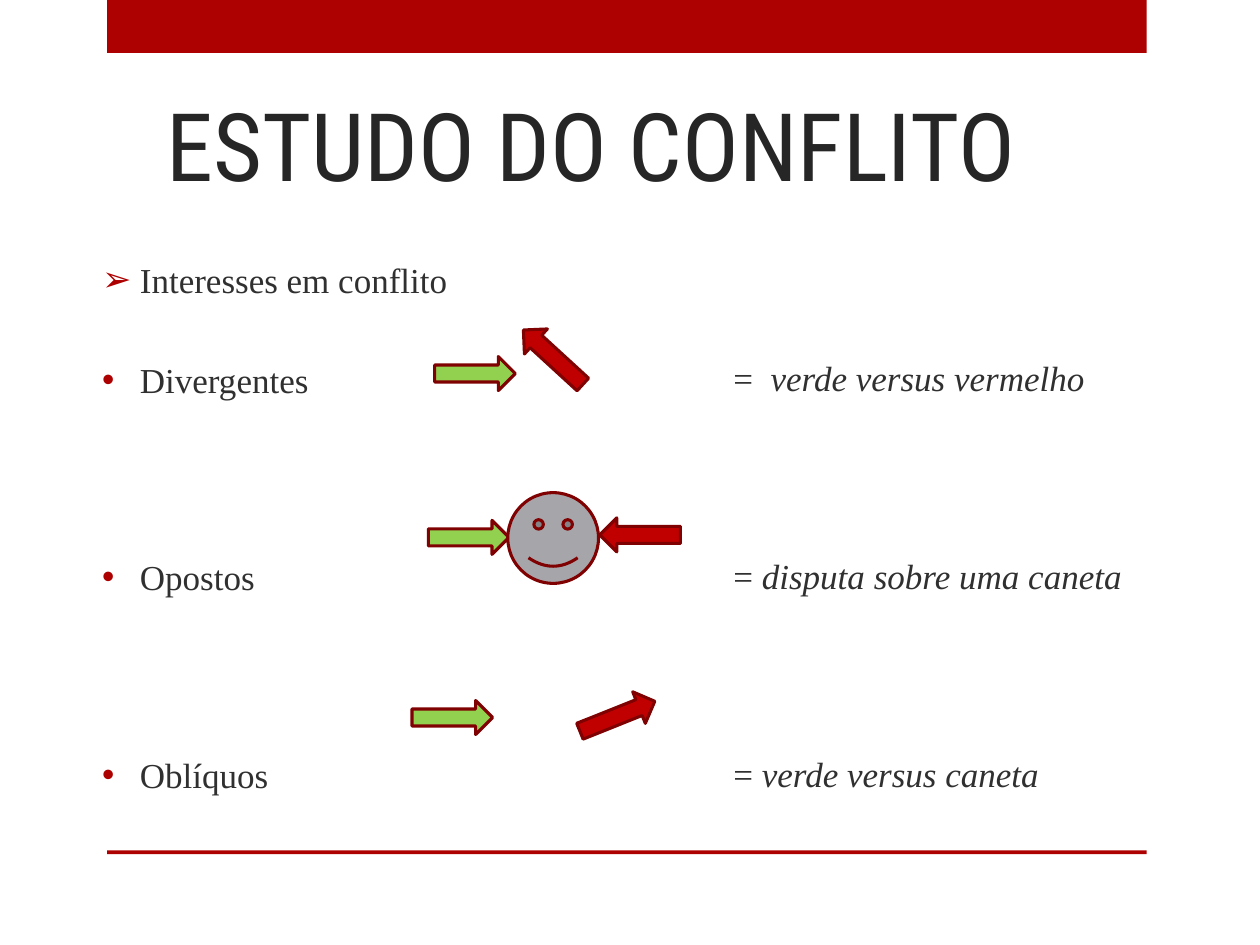
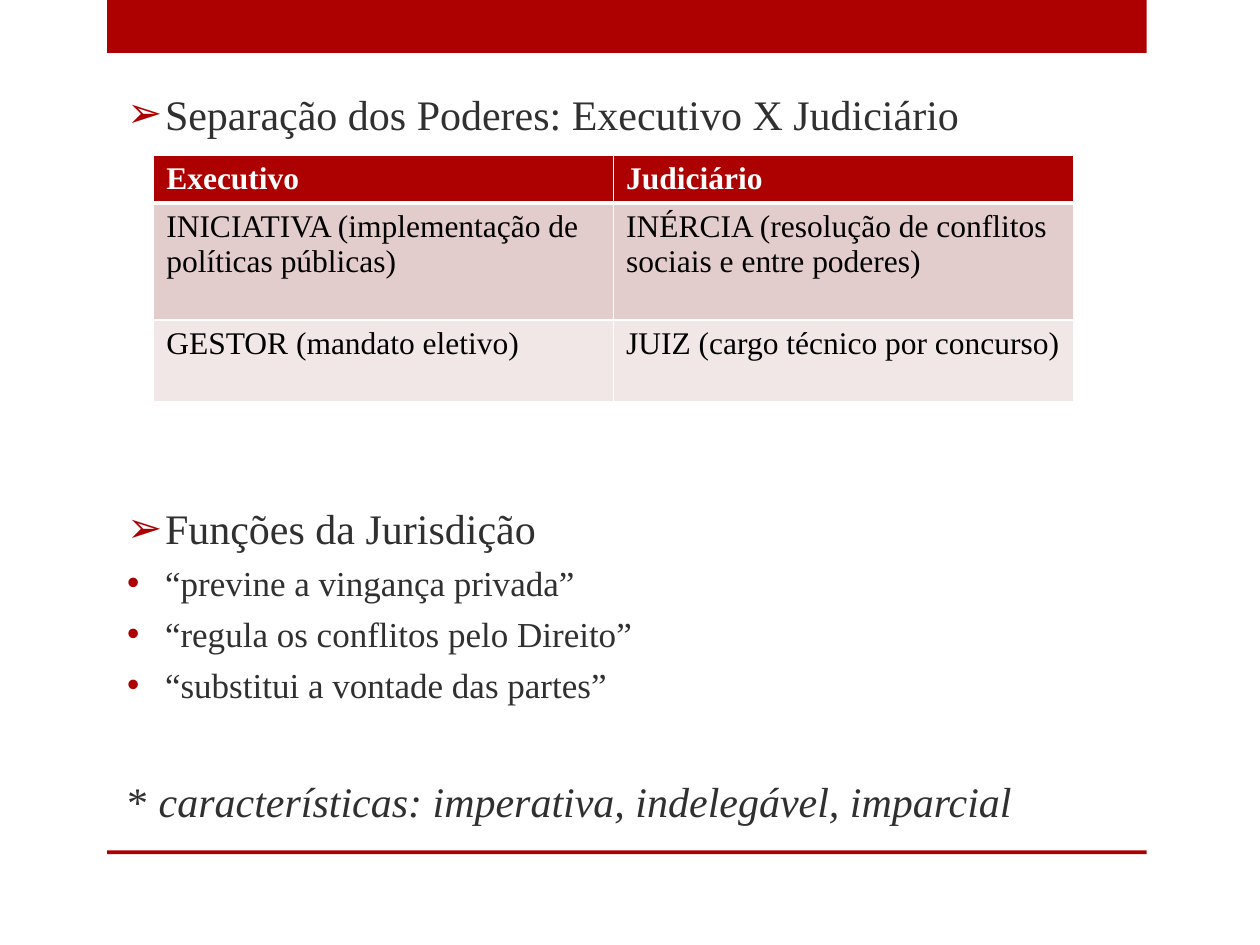
import pptx
import pptx.dml.color
import pptx.enum.shapes
import pptx.enum.text
import pptx.oxml
import pptx.oxml.ns
import pptx.util
from dataclasses import dataclass

SHAPES = pptx.enum.shapes.MSO_SHAPE
ALIGN = pptx.enum.text.PP_ALIGN
ANCHOR = pptx.enum.text.MSO_ANCHOR
NO_FIT = pptx.enum.text.MSO_AUTO_SIZE.NONE

# Slide grid: every length below is in columns (x) or rows (y)
WIDTH, HEIGHT = pptx.util.Inches(10), pptx.util.Inches(7.5)
COLUMNS, ROWS = 100, 75
HANGING = 3  # columns between a bullet and its text
ARROW_SIZE = (6.4, 2.7)


@dataclass(frozen=True)
class Theme:
    red: str = "AD0101"
    title: str = "262626"
    text: str = "303030"
    white: str = "FFFFFF"
    black: str = "000000"
    outline: str = "800101"
    green_arrow: str = "92D050"
    red_arrow: str = "C00000"
    face: str = "A5A5AA"
    table_rows: tuple = ("AD0101", "E3CCCC", "F1E7E7")
    title_font: str = "Roboto Condensed"
    body_font: str = "Times New Roman"
    title_size: int = 54
    heading_size: int = 24
    item_size: int = 20
    table_size: int = 18
    outline_width: float = 1.75


def across(columns):
    return int(WIDTH * columns / COLUMNS)


def down(rows):
    return int(HEIGHT * rows / ROWS)


def box(left, top, width, height):
    return across(left), down(top), across(width), down(height)


def rgb(colour):
    return pptx.dml.color.RGBColor.from_string(colour)


def apply(target, formats):
    for name, value in formats.items():
        setattr(target, name, value)


def element(markup):
    namespaces = pptx.oxml.ns.nsdecls("a")
    return pptx.oxml.parse_xml(markup.replace(" ", f" {namespaces} ", 1))


class Deck:
    def __init__(self, theme):
        self.theme = theme
        self.presentation = pptx.Presentation()
        apply(self.presentation, {"slide_width": WIDTH, "slide_height": HEIGHT})
        self.slide = None

    def new_slide(self, layout):
        layouts = self.presentation.slide_layouts
        self.slide = self.presentation.slides.add_slide(layouts.get_by_name(layout))

    def shape(self, kind, place, fill, outline=None, rotation=0):
        shape = self.slide.shapes.add_shape(kind, *box(*place))
        shape.shadow.inherit = False
        shape.rotation = rotation
        shape.fill.solid()
        shape.fill.fore_color.rgb = rgb(fill)
        if outline:
            shape.line.color.rgb = rgb(outline)
            shape.line.width = pptx.util.Pt(self.theme.outline_width)
        else:
            shape.line.fill.background()
        return shape

    def master_band(self, place, number):
        """Draw a band and move it behind everything, into the master."""
        band = self.shape(SHAPES.RECTANGLE, place, self.theme.red)
        band.element.nvSpPr.cNvPr.set("id", str(number))
        self.presentation.slide_master.element.cSld.spTree.insert(2, band.element)

    def run(self, paragraph, text, font, size, colour, **formats):
        run = paragraph.add_run()
        run.text = text
        apply(run.font, {"name": font, "size": pptx.util.Pt(size), **formats})
        run.font.color.rgb = rgb(colour)

    def placeholder(self, shape, place, anchor):
        names = ("left", "top", "width", "height")
        apply(shape, dict(zip(names, box(*place))))
        frame = shape.text_frame
        apply(frame, {"word_wrap": True, "auto_size": NO_FIT, "vertical_anchor": anchor})
        return frame

    def title(self, text, place):
        frame = self.placeholder(self.slide.shapes.title, place, ANCHOR.BOTTOM)
        paragraph = frame.paragraphs[0]
        paragraph.alignment = ALIGN.CENTER
        self.run(paragraph, text, self.theme.title_font, self.theme.title_size,
                 self.theme.title)

    def remove_title(self):
        title = self.slide.shapes.title.element
        title.getparent().remove(title)

    def bullet(self, paragraph, symbol):
        properties = paragraph._p.get_or_add_pPr()
        indent = across(HANGING) if symbol else 0
        apply(properties, {"marL": indent, "indent": -indent})
        properties.set("marL", str(indent))
        properties.set("indent", str(-indent))
        if symbol:
            properties.append(element(
                f'<a:buClr ><a:srgbClr val="{self.theme.red}"/></a:buClr>'))
            properties.append(element(f'<a:buChar char="{symbol}"/>'))
        else:
            properties.append(element("<a:buNone />"))

    def body(self, index, place, items):
        """Items are (bullet, plain text, italic text, size, points before)."""
        frame = self.placeholder(self.slide.placeholders[index], place, ANCHOR.TOP)
        for number, (symbol, plain, italic, size, before) in enumerate(items):
            paragraph = frame.add_paragraph() if number else frame.paragraphs[0]
            apply(paragraph, {"space_before": pptx.util.Pt(before),
                              "alignment": ALIGN.LEFT})
            self.bullet(paragraph, symbol)
            for text, slanted in ((plain, False), (italic, True)):
                if text:
                    self.run(paragraph, text, self.theme.body_font, size,
                             self.theme.text, italic=slanted)

    def border(self, cell, side, points):
        cell._tc.get_or_add_tcPr().append(element(
            f'<a:ln{side} w="{pptx.util.Pt(points)}"><a:solidFill>'
            f'<a:srgbClr val="{self.theme.white}"/></a:solidFill></a:ln{side}>'))

    def table(self, place, row_heights, texts):
        table = self.slide.shapes.add_table(
            len(texts), len(texts[0]), *box(*place)).table
        for row, height in zip(table.rows, row_heights):
            row.height = down(height)
        for row_number, row_texts in enumerate(texts):
            header = row_number == 0
            for column_number, text in enumerate(row_texts):
                cell = table.cell(row_number, column_number)
                widths = {"L": 1, "R": 1, "T": 3 if row_number == 1 else 1,
                          "B": 3 if header else 1}
                for side, points in widths.items():
                    self.border(cell, side, points)
                cell.fill.solid()
                cell.fill.fore_color.rgb = rgb(self.theme.table_rows[row_number])
                self.run(cell.text_frame.paragraphs[0], text, self.theme.body_font,
                         self.theme.table_size,
                         self.theme.white if header else self.theme.black,
                         bold=header)


def conflict_slide(deck):
    theme = deck.theme
    deck.new_slide("Two Content")

    # Bands shared by all slides
    deck.master_band((8.5, 0, 82.5, 4.2), 101)
    deck.master_band((8.5, 67.5, 82.5, 0.3), 102)

    deck.title("ESTUDO DO CONFLITO", (9.8, 5.2, 74.2, 11.2))

    # Kinds of conflict, with their meanings on the same lines
    size, first_gap, gap = theme.item_size, 33, 89
    deck.body(1, (7.1, 20, 48, 44), [
        ("➢", "Interesses em conflito", "", size, 0),
        ("•", "Divergentes", "", size, first_gap),
        ("•", "Opostos", "", size, gap),
        ("•", "Oblíquos", "", size, gap),
    ])
    deck.body(2, (57.2, 27.8, 37.3, 36.2), [
        ("", "=  ", "verde versus vermelho", size, 0),
        ("", "= ", "disputa sobre uma caneta", size, gap),
        ("", "= ", "verde versus caneta", size, gap),
    ])

    # Arrows: left, top, rotation, colour
    arrows = [
        (34.5, 28.3, 0, theme.green_arrow),
        (40.7, 27, 222.5, theme.red_arrow),
        (34, 41.3, 0, theme.green_arrow),
        (47.6, 41.1, 180, theme.red_arrow),
        (32.7, 55.6, 0, theme.green_arrow),
        (45.8, 55.5, 338.2, theme.red_arrow),
    ]
    for left, top, rotation, colour in arrows:
        deck.shape(SHAPES.RIGHT_ARROW, (left, top, *ARROW_SIZE), colour,
                   theme.outline, rotation)
    deck.shape(SHAPES.SMILEY_FACE, (40.3, 39.1, 7.2, 7.2), theme.face, theme.outline)


def powers_slide(deck):
    heading, item = deck.theme.heading_size, deck.theme.item_size
    deck.new_slide("Title and Content")
    deck.remove_title()

    # Headings and list, leaving room for the table
    functions = ["“previne a vingança privada”", "“regula os conflitos pelo Direito”",
                 "“substitui a vontade das partes”"]
    deck.body(1, (9.1, 6.5, 82.5, 60), [
        ("➢", "Separação dos Poderes: Executivo X Judiciário", "", heading, 0),
        ("➢", "Funções da Jurisdição", "", heading, 208),
        *(("•", function, "", item, 5) for function in functions),
        ("", "* ", "características: imperativa, indelegável, imparcial", heading, 40),
    ])

    # Comparison of the two powers
    deck.table((12.2, 12.3, 73, 19.6), (3.8, 9.3, 6.5), [
        ("Executivo", "Judiciário"),
        ("INICIATIVA (implementação de políticas públicas)",
         "INÉRCIA (resolução de conflitos sociais e entre poderes)"),
        ("GESTOR (mandato eletivo)", "JUIZ (cargo técnico por concurso)"),
    ])


def main():
    deck = Deck(Theme())
    conflict_slide(deck)
    powers_slide(deck)
    deck.presentation.save("out.pptx")


if __name__ == "__main__":
    main()
